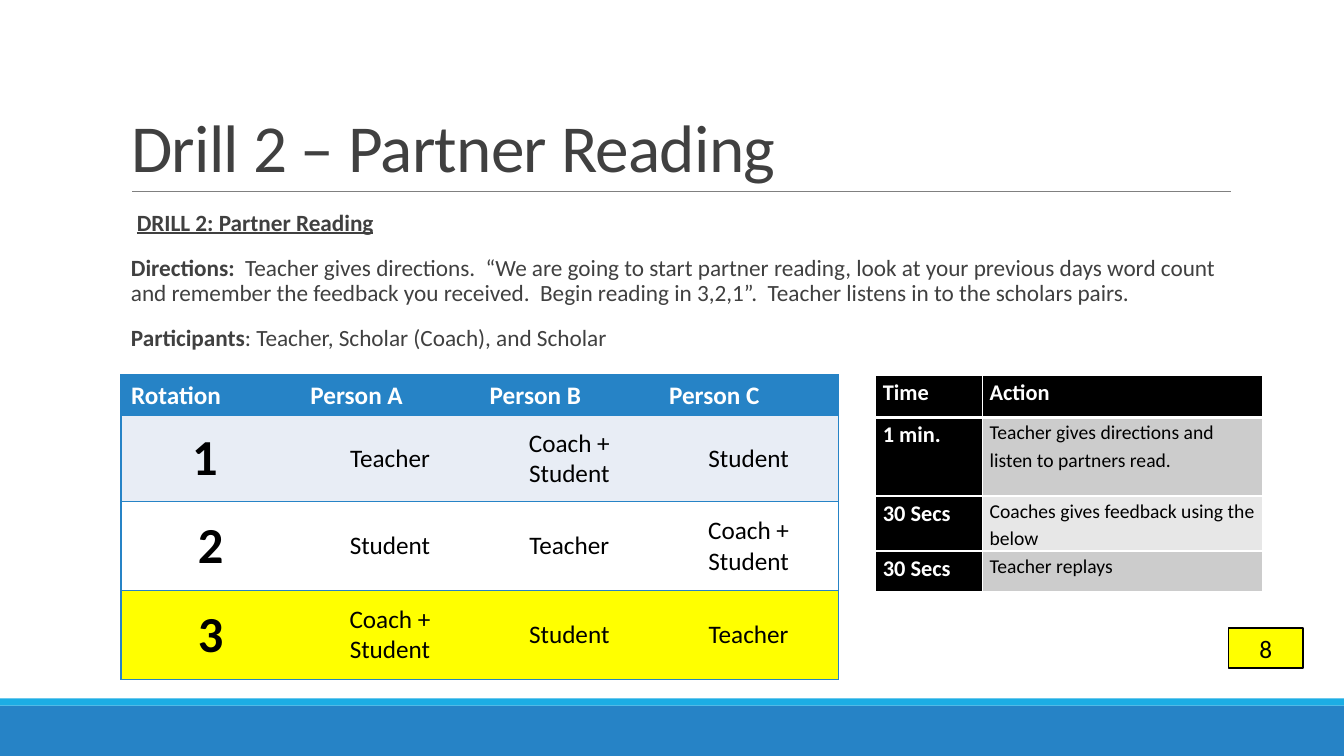
from lxml import etree
from pptx import Presentation
from pptx.dml.color import RGBColor
from pptx.enum import shapes, text
from pptx.oxml import ns
from pptx.util import Cm, Pt

FONT = "Calibri"
BLUE = RGBColor(0x26, 0x83, 0xC6)
CYAN = RGBColor(0x1C, 0xAD, 0xE4)
PALE = RGBColor(0xE8, 0xED, 0xF5)
YELLOW = RGBColor(0xFF, 0xFF, 0x00)
WHITE = RGBColor(0xFF, 0xFF, 0xFF)
BLACK = RGBColor(0x00, 0x00, 0x00)
INK = RGBColor(0x40, 0x40, 0x40)
GREY = RGBColor(0x80, 0x80, 0x80)
SILVER = RGBColor(0xCC, 0xCC, 0xCC)
LIGHT = RGBColor(0xE7, 0xE7, 0xE7)

DIRECTIONS = (
    "Teacher gives directions.  “We are going to start partner reading, look at your "
    "previous days word count and remember the feedback you received.  Begin reading "
    "in 3,2,1”.  Teacher listens in to the scholars pairs."
)
ROTATIONS = [
    ["Rotation", "Person A", "Person B", "Person C"],
    ["1 ", "Teacher", "Coach + Student", "Student"],
    ["2", "Student", "Teacher", "Coach + Student"],
    ["3", "Coach + Student", "Student", "Teacher"],
]
TIMINGS = [
    ["Time", "Action"],
    ["1 min.", "Teacher gives directions and listen to partners read."],
    ["30 Secs", "Coaches gives feedback using the below"],
    ["30 Secs", "Teacher replays"],
]


def add_text(para, content, size=18, color=BLACK, bold=False, underline=False,
             align=None, line_spacing=None):
    """Append formatted text to a paragraph."""
    span = para.add_run()
    span.text = content
    font = span.font
    font.name, font.size, font.bold, font.underline = FONT, Pt(size), bold, underline
    font.color.rgb = color
    if align is not None:
        para.alignment = align
    if line_spacing is not None:
        para.line_spacing = line_spacing
    return span


def add_box(page, left, top, width, height, fill, outline=None):
    box = page.shapes.add_shape(shapes.MSO_SHAPE.RECTANGLE,
                                Cm(left), Cm(top), Cm(width), Cm(height))
    box.shadow.inherit = False
    box.fill.solid()
    box.fill.fore_color.rgb = fill
    if outline is None:
        box.line.fill.background()
    else:
        box.line.color.rgb = outline
        box.line.width = Pt(1.25)
    return box


def add_rule(page, left, right, y):
    rule = page.shapes.add_connector(shapes.MSO_CONNECTOR.STRAIGHT,
                                     Cm(left), Cm(y), Cm(right), Cm(y))
    rule.line.color.rgb = GREY
    rule.line.width = Pt(0.5)
    etree.SubElement(rule._element.spPr, ns.qn("a:effectLst"))


def place(holder, left, top, width, height, anchor):
    holder.left, holder.top = Cm(left), Cm(top)
    holder.width, holder.height = Cm(width), Cm(height)
    frame = holder.text_frame
    frame.word_wrap = True
    frame.auto_size = text.MSO_AUTO_SIZE.NONE
    frame.vertical_anchor = anchor
    return frame


def set_hanging_blank_bullet(para):
    props = para._p.get_or_add_pPr()
    props.set("marL", str(Cm(0.25)))
    props.set("indent", str(-Cm(0.25)))
    color = etree.SubElement(props, ns.qn("a:buClr"))
    etree.SubElement(color, ns.qn("a:srgbClr"), val=str(CYAN))
    etree.SubElement(props, ns.qn("a:buChar"), char=" ")


def set_borders(cell, **sides):
    """Each side (L, R, T, B) is a (colour, points) pair, or None for no line."""
    props = cell._tc.get_or_add_tcPr()
    for index, side in enumerate("LRTB"):
        style = sides.get(side)
        line = etree.Element(ns.qn("a:ln" + side))
        if style is None:
            etree.SubElement(line, ns.qn("a:noFill"))
        else:
            color, points = style
            line.set("w", str(Pt(points)))
            fill = etree.SubElement(line, ns.qn("a:solidFill"))
            etree.SubElement(fill, ns.qn("a:srgbClr"), val=str(color))
        props.insert(index, line)


def add_grid(page, left, top, widths, heights):
    frame = page.shapes.add_table(len(heights), len(widths), Cm(left), Cm(top),
                                  Cm(sum(widths)), Cm(sum(heights)))
    grid = frame.table
    for column, width in zip(grid.columns, widths):
        column.width = Cm(width)
    for row, height in zip(grid.rows, heights):
        row.height = Cm(height)
    return grid


def fill_cell(cell, content, fill, **style):
    cell.fill.solid()
    cell.fill.fore_color.rgb = fill
    add_text(cell.text_frame.paragraphs[0], content, **style)


def add_rotation_table(page):
    grid = add_grid(page, 3.05, 9.45, [4.52] * 4, [1, 2.16, 2.24, 2.24])
    edge = (BLUE, 1)
    for r, (row, fill) in enumerate(zip(ROTATIONS, [BLUE, PALE, WHITE, YELLOW])):
        for c, content in enumerate(row):
            cell = grid.cell(r, c)
            if r == 0:
                fill_cell(cell, content, fill, color=WHITE, bold=True)
            else:
                fill_cell(cell, content, fill, size=18 if c else 36, bold=c == 0,
                          align=text.PP_ALIGN.CENTER)
                cell.vertical_anchor = text.MSO_ANCHOR.MIDDLE
            set_borders(cell, T=edge, B=edge, L=edge if c == 0 else None,
                        R=edge if c == len(row) - 1 else None)


def add_timing_table(page):
    grid = add_grid(page, 22.07, 9.45, [2.69, 7.06], [1.07, 1.98, 1.37, 1.02])
    thin, thick = (WHITE, 1), (WHITE, 3)
    for r, (row, fill) in enumerate(zip(TIMINGS, [BLACK, SILVER, LIGHT, SILVER])):
        for c, content in enumerate(row):
            cell = grid.cell(r, c)
            cell.margin_left = cell.margin_right = Cm(0.18)
            cell.margin_top = cell.margin_bottom = 0
            heading = r == 0 or c == 0
            fill_cell(cell, content, BLACK if heading else fill,
                      size=16 if heading else 14, bold=heading,
                      color=WHITE if heading else BLACK, line_spacing=1.15)
            set_borders(cell, L=thin, R=thin, T=thick if r == 1 else thin,
                        B=thick if r == 0 else thin)


def add_title(page):
    frame = place(page.shapes.title, 3.05, 0.79, 27.94, 4.04, text.MSO_ANCHOR.BOTTOM)
    span = add_text(frame.paragraphs[0], "Drill 2 – Partner Reading", size=48, color=INK,
                    align=text.PP_ALIGN.LEFT, line_spacing=0.85)
    span.font._element.set("spc", "-50")


def add_instructions(page):
    frame = place(page.placeholders[1], 3.05, 5.13, 27.94, 4.04, text.MSO_ANCHOR.TOP)
    frame.margin_left = frame.margin_right = 0
    heading = {"bold": True}
    lines = [
        [("\N{NO-BREAK SPACE}", {"size": 18.5}),
         ("DRILL 2: Partner Reading", {"bold": True, "underline": True})],
        [("Directions:  ", heading), (DIRECTIONS, {})],
        [("Participants", heading), (": Teacher, Scholar (Coach), and Scholar", {})],
    ]
    for index, spans in enumerate(lines):
        para = frame.add_paragraph() if index else frame.paragraphs[0]
        para.space_before, para.space_after = Pt(12), Pt(2)
        para.line_spacing = 0.9
        set_hanging_blank_bullet(para)
        for content, style in spans:
            add_text(para, content, **{"size": 16.6, "color": INK, **style})


def main():
    deck = Presentation()
    deck.slide_width, deck.slide_height = Cm(33.87), Cm(19.05)
    page = deck.slides.add_slide(deck.slide_layouts[1])

    # Footer bands and title rule
    add_box(page, 0, 17.78, 33.87, 1.27, BLUE)
    add_box(page, 0, 17.6, 33.87, 0.18, CYAN)
    add_rule(page, 3.33, 31.01, 4.83)

    # Title and instructions
    add_title(page)
    add_instructions(page)

    # Page number badge
    badge = add_box(page, 30.96, 15.82, 1.88, 1.02, YELLOW, outline=BLACK)
    badge.text_frame.vertical_anchor = text.MSO_ANCHOR.MIDDLE
    add_text(badge.text_frame.paragraphs[0], "8", align=text.PP_ALIGN.CENTER)

    # Tables
    add_rotation_table(page)
    add_timing_table(page)

    deck.save("out.pptx")


if __name__ == "__main__":
    main()
